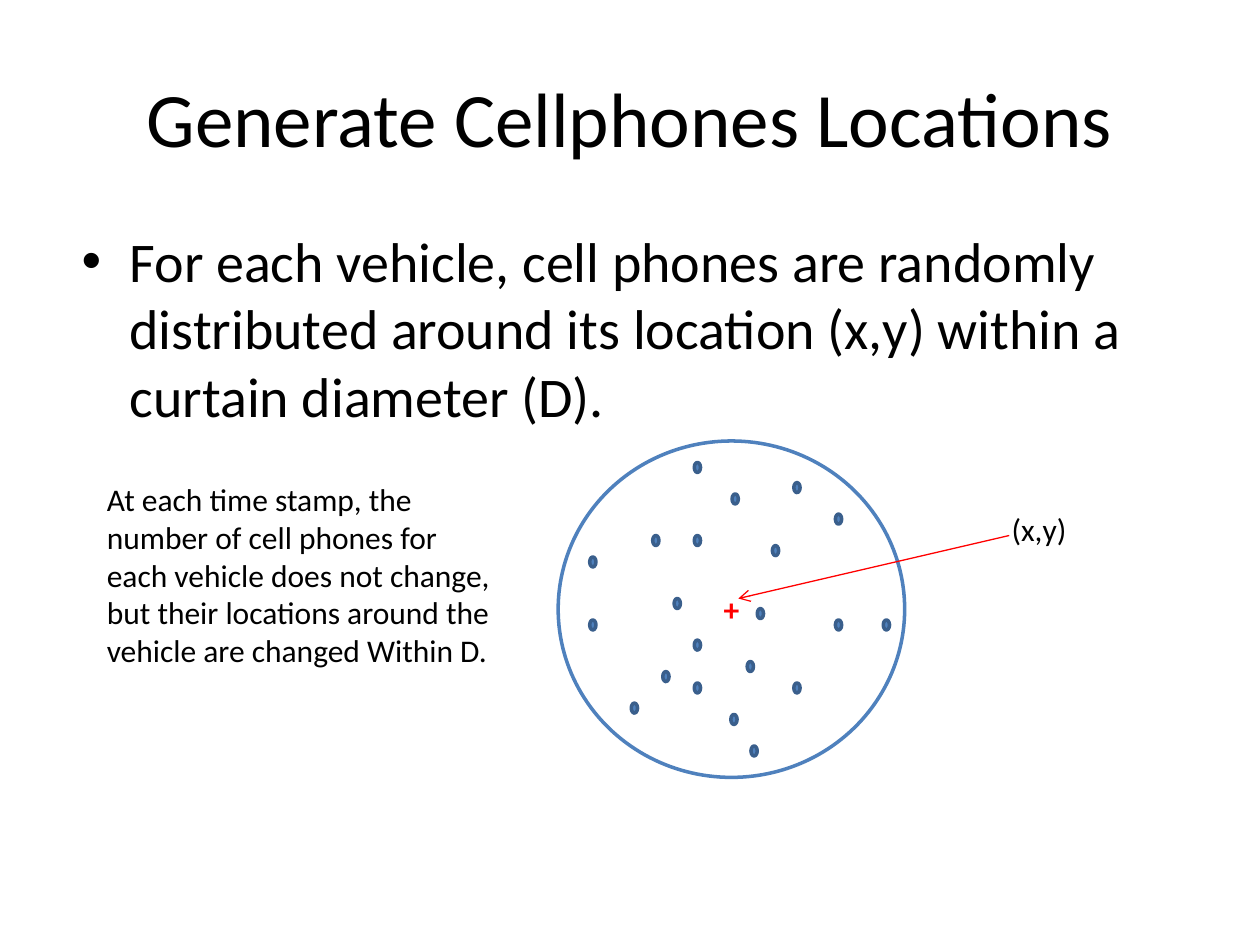
from pptx import Presentation
from pptx.dml.color import RGBColor
from pptx.enum.shapes import MSO_CONNECTOR as Connector, MSO_SHAPE as Shape
from pptx.enum.text import MSO_ANCHOR as Anchor, PP_ALIGN as Align
from pptx.oxml.ns import qn
from pptx.util import Inches, Pt
from lxml.etree import SubElement

BLACK, WHITE, RED = "000000", "FFFFFF", "FF0000"
BLUE, DARK_BLUE = "4F81BD", "3A5F8C"


def color(hex_value):
    return RGBColor.from_string(hex_value)


def add_text(left, top, width, height, lines, size, wrap=True):
    box = page.shapes.add_textbox(Inches(left), Inches(top), Inches(width), Inches(height))
    frame = box.text_frame
    frame.word_wrap = wrap
    frame.text = "\n".join(lines)
    for para in frame.paragraphs:
        for span in para.runs:
            span.font.name = "Calibri"
            span.font.size = Pt(size)
            span.font.color.rgb = color(BLACK)
    return frame


deck = Presentation()
deck.slide_width, deck.slide_height = Inches(10), Inches(7.5)
page = deck.slides.add_slide(deck.slide_layouts[6])

# Title
title = add_text(0.5, 0.3, 9, 1.25, ["Generate Cellphones Locations"], 44)
title.vertical_anchor = Anchor.MIDDLE
title.paragraphs[0].alignment = Align.CENTER

# Bulleted statement
body = add_text(0.55, 1.75, 8.95, 5.59, [
    "For each vehicle, cell phones are randomly distributed around "
    "its location (x,y) within a curtain diameter (D)."], 32)
props = body.paragraphs[0]._p.get_or_add_pPr()
props.set("marL", str(Inches(0.38)))
props.set("indent", str(Inches(-0.38)))
SubElement(props, qn("a:buFont")).set("typeface", "Arial")
SubElement(props, qn("a:buChar")).set("char", "•")

# Range circle with the vehicle at its centre
circle = page.shapes.add_shape(Shape.OVAL, Inches(4.43), Inches(3.5), Inches(2.75), Inches(2.67))
circle.shadow.inherit = False
circle.fill.solid()
circle.fill.fore_color.rgb = color(WHITE)
circle.line.color.rgb = color(BLUE)
circle.line.width = Pt(2)
circle.text_frame.text = "+"
circle.text_frame.vertical_anchor = Anchor.MIDDLE
para = circle.text_frame.paragraphs[0]
para.alignment = Align.CENTER
font = para.runs[0].font
font.name, font.size, font.bold = "Calibri", Pt(18), True
font.color.rgb = color(RED)

# Cell phones scattered inside the circle
phones = [
    (5.81, 3.92), (6.13, 4.33), (6.01, 4.83), (6.3, 5.42), (5.01, 5.58),
    (5.18, 4.25), (5.35, 4.75), (5.51, 4.25), (5.51, 5.42), (7.01, 4.92),
    (5.51, 3.67), (4.68, 4.42), (5.96, 5.92), (6.63, 4.08), (5.26, 5.33),
    (4.68, 4.92), (5.51, 5.08), (6.63, 4.92), (6.3, 3.83), (5.8, 5.67),
    (5.93, 5.25),
]
for left, top in phones:
    phone = page.shapes.add_shape(Shape.OVAL, Inches(left), Inches(top), Inches(0.05), Inches(0.08))
    phone.shadow.inherit = False
    phone.fill.solid()
    phone.fill.fore_color.rgb = color(BLUE)
    phone.line.color.rgb = color(DARK_BLUE)
    phone.line.width = Pt(2)

# Arrow from the label to the vehicle
arrow = page.shapes.add_connector(
    Connector.STRAIGHT, Inches(5.86), Inches(4.75), Inches(8.01), Inches(4.25))
arrow.line.color.rgb = color(RED)
arrow.line.width = Pt(0.75)
SubElement(arrow.line._get_or_add_ln(), qn("a:headEnd")).set("type", "arrow")
SubElement(arrow._element.spPr, qn("a:effectLst"))

# Label and side note
add_text(7.93, 4, 0.82, 0.4, ["(x,y)"], 18, wrap=False)
add_text(0.75, 3.76, 3.33, 2.22, [
    "At each time stamp, the number of cell phones for each vehicle does not change,",
    "but their locations around the vehicle are changed Within D."], 18)

deck.save("out.pptx")
